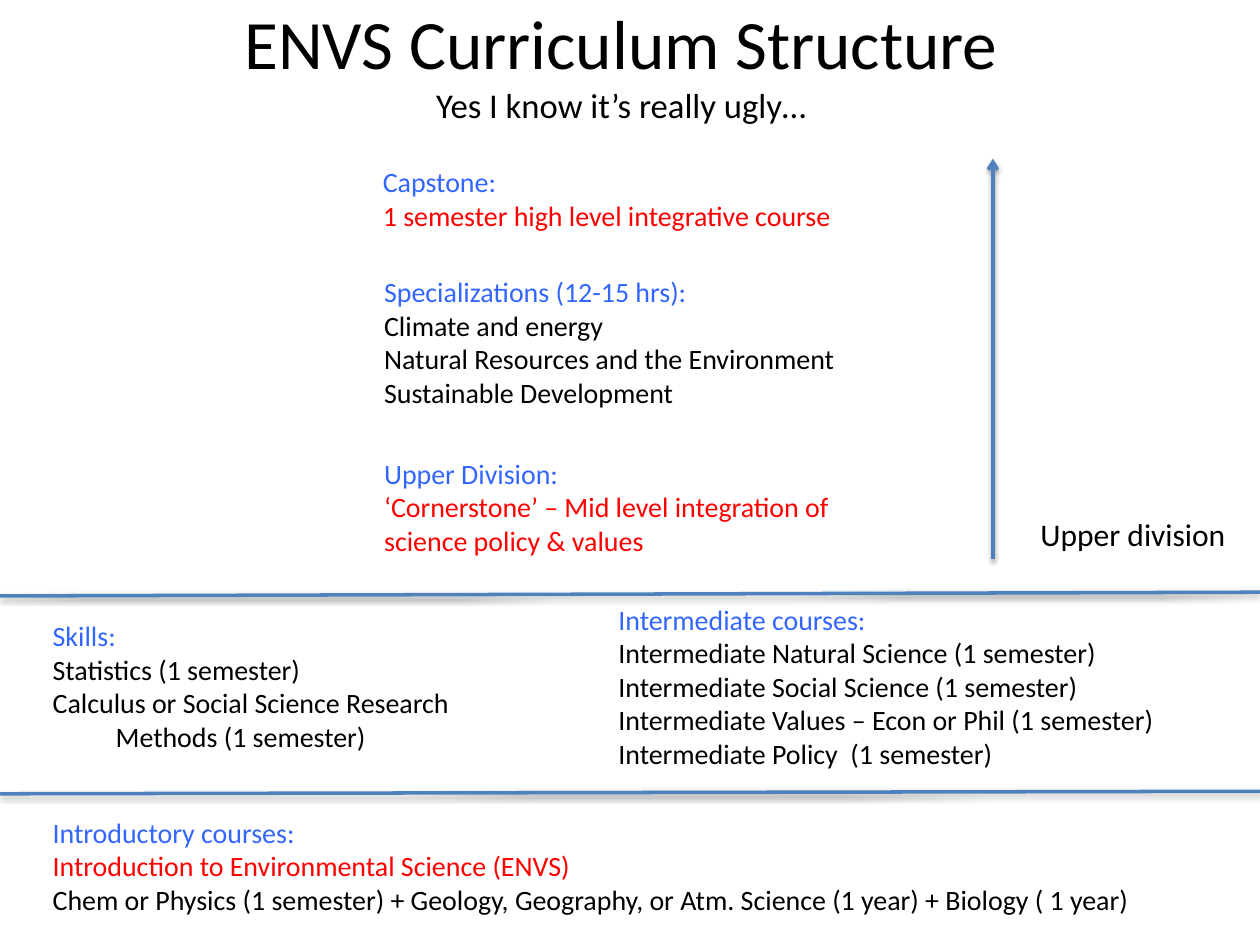
from lxml import etree
from pptx import Presentation
from pptx.dml.color import RGBColor
from pptx.enum import shapes, text
from pptx.oxml import ns
from pptx.util import Inches, Pt

BLACK = RGBColor(0x00, 0x00, 0x00)
BLUE = RGBColor(0x33, 0x66, 0xFF)
RED = RGBColor(0xFF, 0x00, 0x00)
LINE_BLUE = RGBColor(0x4F, 0x81, 0xBD)
FONT = "Calibri"

TITLE = [("ENVS Curriculum Structure", 39.6), ("Yes I know it’s really ugly…", 19.8)]

COURSE_BLOCKS = [
    ((0.32, 6.42, 9.3, 0.91), [
        ("Introductory courses:", BLUE),
        ("Introduction to Environmental Science (ENVS)", RED),
        ("Chem or Physics (1 semester) + Geology, Geography, or Atm. Science (1 year)"
         " + Biology ( 1 year)", BLACK),
    ]),
    ((4.81, 4.73, 4.5, 1.45), [
        ("Intermediate courses:", BLUE),
        ("Intermediate Natural Science (1 semester)", BLACK),
        ("Intermediate Social Science (1 semester)", BLACK),
        ("Intermediate Values – Econ or Phil (1 semester)", BLACK),
        ("Intermediate Policy  (1 semester)", BLACK),
    ]),
    ((0.32, 4.86, 3.56, 1.18), [
        ("Skills:", BLUE),
        ("Statistics (1 semester)", BLACK),
        ("Calculus or Social Science Research", BLACK),
        ("\tMethods (1 semester)", BLACK),
    ]),
    ((2.95, 2.13, 4.12, 1.45), [
        ("Specializations (12-15 hrs):", BLUE),
        ("Climate and energy", BLACK),
        ("Natural Resources and the Environment", BLACK),
        ("Sustainable Development", BLACK),
    ]),
    ((2.95, 3.57, 4.12, 0.91), [
        ("Upper Division:", BLUE),
        ("‘Cornerstone’ – Mid level integration of science policy & values", RED),
    ]),
    ((2.94, 1.26, 4.12, 0.64), [
        ("Capstone:", BLUE),
        ("1 semester high level integrative course", RED),
    ]),
]
DIVISION_LABEL = ((8.16, 4.04, 1.73, 0.4), [("Upper division", BLACK)])

DIVIDERS = [(0, 6.3, 10, 6.28), (0, 4.73, 10, 4.7)]
UPWARD_ARROW = (7.88, 4.44, 7.88, 1.26)


def add_run(p, words, size, color):
    r = p.add_run()
    r.text = words
    r.font.name = FONT
    r.font.size = Pt(size)
    r.font.color.rgb = color


def add_block(s, box, lines, size=16):
    sp = s.shapes.add_textbox(*map(Inches, box))
    tf = sp.text_frame
    tf.word_wrap = True
    tf.auto_size = text.MSO_AUTO_SIZE.SHAPE_TO_FIT_TEXT
    for i, (words, color) in enumerate(lines):
        p = tf.paragraphs[0] if i == 0 else tf.add_paragraph()
        add_run(p, words, size, color)


def add_line(s, ends):
    line = s.shapes.add_connector(shapes.MSO_CONNECTOR.STRAIGHT, *map(Inches, ends))
    line.line.color.rgb = LINE_BLUE
    line.line.width = Pt(2)
    effects = etree.SubElement(line._element.spPr, ns.qn("a:effectLst"))
    shadow = etree.SubElement(
        effects, ns.qn("a:outerShdw"), blurRad=str(Pt(3.1)), dist=str(Pt(1.6)),
        dir="5400000", rotWithShape="0")
    color = etree.SubElement(shadow, ns.qn("a:srgbClr"), val=str(BLACK))
    etree.SubElement(color, ns.qn("a:alpha"), val="38000")
    return line


def add_title(s):
    sp = s.shapes.title
    sp.left, sp.top, sp.width, sp.height = map(Inches, (0.43, 0.14, 9, 0.72))
    tf = sp.text_frame
    tf.auto_size = text.MSO_AUTO_SIZE.NONE
    tf.vertical_anchor = text.MSO_ANCHOR.MIDDLE
    p = tf.paragraphs[0]
    p.alignment = text.PP_ALIGN.CENTER
    for i, (words, size) in enumerate(TITLE):
        if i:
            p.add_line_break()
        add_run(p, words, size, BLACK)


def main():
    prs = Presentation()
    prs.slide_width, prs.slide_height = Inches(10), Inches(7.5)
    s = prs.slides.add_slide(prs.slide_layouts[5])
    add_title(s)
    for box, lines in COURSE_BLOCKS:
        add_block(s, box, lines)
    add_block(s, *DIVISION_LABEL, size=18)
    for ends in DIVIDERS:
        add_line(s, ends)
    arrow = add_line(s, UPWARD_ARROW)
    etree.SubElement(arrow.line._get_or_add_ln(), ns.qn("a:tailEnd"), type="arrow")
    prs.save("out.pptx")


if __name__ == "__main__":
    main()
